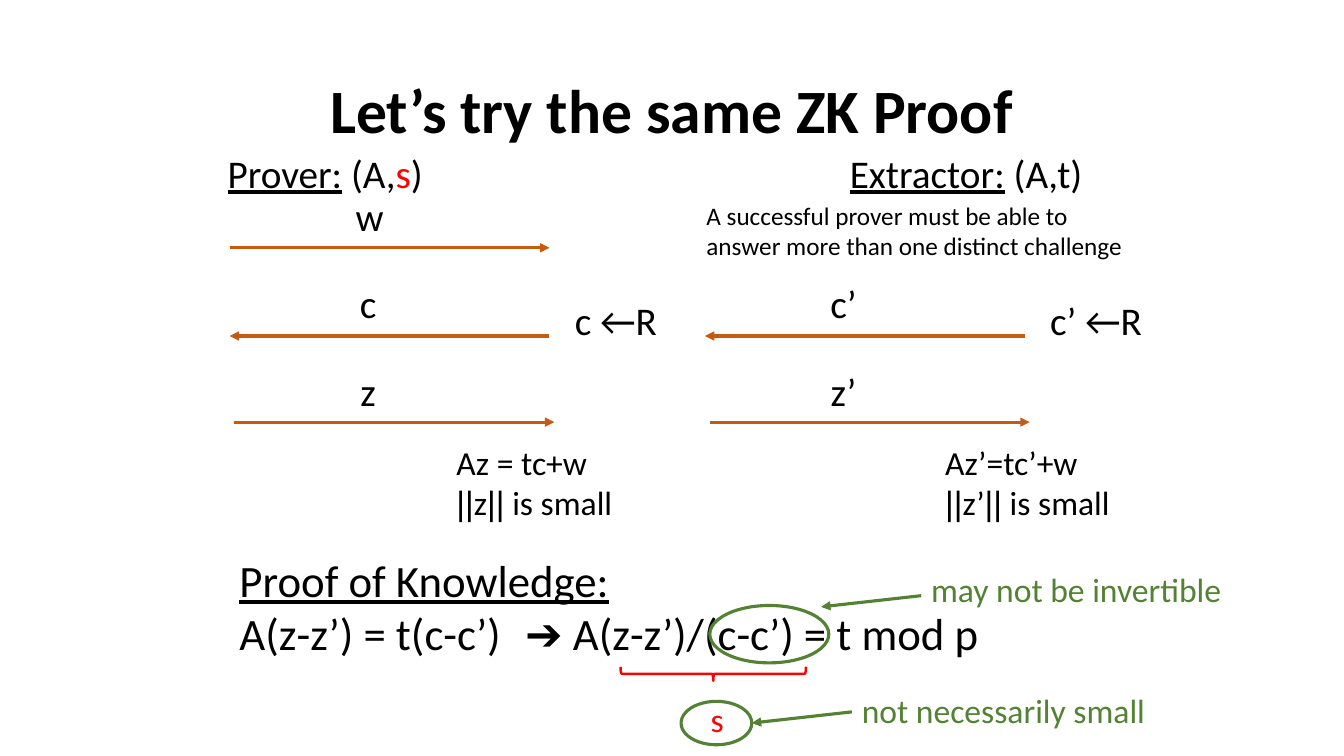
from lxml import etree
from pptx import Presentation
from pptx.dml.color import RGBColor
from pptx.enum import shapes, text
from pptx.oxml import ns
from pptx.util import Pt

COLOURS = {"ink": "000000", "arrow": "C55A11", "secret": "FF0000", "remark": "548235"}
LEFT, CENTRE = text.PP_ALIGN.LEFT, text.PP_ALIGN.CENTER


def colour(name):
    return RGBColor.from_string(COLOURS[name])


def add_text(slide, box, lines, size, ink="ink", align=LEFT):
    """Each line is a string or a list of (string, format) runs."""
    shape = slide.shapes.add_textbox(*map(Pt, box))
    frame = shape.text_frame
    frame.word_wrap = True
    for index, line in enumerate(lines):
        paragraph = frame.paragraphs[0] if index == 0 else frame.add_paragraph()
        paragraph.alignment = align
        paragraph.font.size = Pt(size)
        paragraph.font.name = "Calibri"
        paragraph.font.color.rgb = colour(ink)
        for words, style in [(line, {})] if isinstance(line, str) else line:
            run = paragraph.add_run()
            run.text = words
            if "underline" in style:
                run.font.underline = True
            if "font" in style:
                run.font.name = style["font"]
            if "ink" in style:
                run.font.color.rgb = colour(style["ink"])
    return shape


def add_arrow(slide, start, end, ink="arrow"):
    connector = slide.shapes.add_connector(
        shapes.MSO_CONNECTOR.STRAIGHT, *map(Pt, (*start, *end)))
    connector.line.color.rgb = colour(ink)
    connector.line.width = Pt(2.25)
    properties = connector._element.spPr
    etree.SubElement(properties.find(ns.qn("a:ln")), ns.qn("a:tailEnd"), type="triangle")
    etree.SubElement(properties, ns.qn("a:effectLst"))


def add_outline(slide, kind, box, ink, width):
    shape = slide.shapes.add_shape(kind, *map(Pt, box))
    shape.shadow.inherit = False
    shape.fill.background()
    shape.line.color.rgb = colour(ink)
    shape.line.width = Pt(width)
    return shape


def add_title(slide, box, words):
    title = slide.shapes.title
    title.left, title.top, title.width, title.height = map(Pt, box)
    frame = title.text_frame
    frame.text = words
    frame.vertical_anchor = text.MSO_ANCHOR.MIDDLE
    paragraph = frame.paragraphs[0]
    paragraph.alignment = CENTRE
    paragraph.line_spacing = 0.9
    paragraph.font.size = Pt(44)
    paragraph.font.bold = True
    paragraph.font.name = "Calibri"
    paragraph.font.color.rgb = colour("ink")


def add_parties(slide, left, top):
    underlined = {"underline": True}
    add_text(slide, (left, top, 176, 41),
             [[("Prover:", underlined), (" (A,", {}), ("s", {"ink": "secret"}), (")", {})]], 28)
    add_text(slide, (left + 444.5, top, 191, 41),
             [[("Extractor:", underlined), (" (A,t)", {})]], 28)


def add_commitment(slide, left, top):
    add_text(slide, (left + 83, top, 35, 41), ["w"], 28)
    add_arrow(slide, (left, top + 43), (left + 228.5, top + 43))
    add_text(slide, (left + 333.5, top + 5.5, 314.5, 51),
             ["A successful prover must be able to answer more than one distinct challenge"], 18)


def add_exchange(slide, left, top, prime, equation, check_offset):
    """One challenge, its response and the check that follows."""
    reach = 228.5
    challenge, response = "c" + prime, "z" + prime
    add_text(slide, (left + 50.5, top, 97, 41), [challenge], 28, align=CENTRE)
    add_arrow(slide, (left + reach, top + 44), (left, top + 44))
    add_text(slide, (left + 239.5, top + 12, 97, 41), [challenge + " ←R"], 28)
    add_text(slide, (left + 44, top + 62.5, 110, 41), [response], 28, align=CENTRE)
    add_arrow(slide, (left + 3.5, top + 105.5), (left + 3.5 + reach, top + 105.5))
    bars = ("||", {"font": "Arial"})
    add_text(slide, (left + check_offset, top + 116, 138, 65.5),
             [equation, [bars, (response, {}), bars, (" is small", {})]], 24)


def add_conclusion(slide, left, top):
    proof = add_text(slide, (left, top, 601, 85),
                     [[("Proof of Knowledge:", {"underline": True})],
                      "A(z-z’) = t(c-c’)\t➔ A(z-z’)/(c-c’) = t mod p"], 32)
    properties = proof.text_frame.paragraphs[1]._p.get_or_add_pPr()
    stops = etree.Element(ns.qn("a:tabLst"))
    etree.SubElement(stops, ns.qn("a:tab"), pos=str(Pt(204)), algn="l")
    properties.find(ns.qn("a:defRPr")).addprevious(stops)

    brace = add_outline(slide, shapes.MSO_SHAPE.LEFT_BRACE,
                        (left + 340.5, top + 24, 10, 132.5), "secret", 1.75)
    brace.rotation = 270
    add_text(slide, (left + 336.5, top + 104.5, 42, 36.5), ["s"], 24, "secret")


def add_remark(slide, left, top, words, ring, arrow_drop):
    """Words at the given corner, with an arrow towards a ringed term."""
    add_text(slide, (left, top, 258, 36), [words], 24, "remark")
    add_outline(slide, shapes.MSO_SHAPE.OVAL, ring, "remark", 2.25)
    start = left, top + arrow_drop
    add_arrow(slide, start, (start[0] - 71.5, start[1] + 8), "remark")


def add_proof_slide(presentation):
    slide = presentation.slides.add_slide(presentation.slide_layouts[5])
    add_title(slide, (66, 29, 828, 104), "Let’s try the same ZK Proof")
    add_parties(slide, 155.5, 103)
    add_commitment(slide, 164, 134)
    add_exchange(slide, 164, 196, "", "Az = tc+w", 155)
    add_exchange(slide, 503.5, 196, "’", "Az’=tc’+w", 164.5)
    add_conclusion(slide, 164, 391)
    add_remark(slide, 658, 403, "may not be invertible", (507, 432.5, 85, 41), 22.5)
    add_remark(slide, 608.5, 489, "not necessarily small", (486.5, 501, 50.5, 31), 19.5)


def main():
    presentation = Presentation()
    presentation.slide_width, presentation.slide_height = Pt(960), Pt(540)
    add_proof_slide(presentation)
    presentation.save("out.pptx")


if __name__ == "__main__":
    main()
